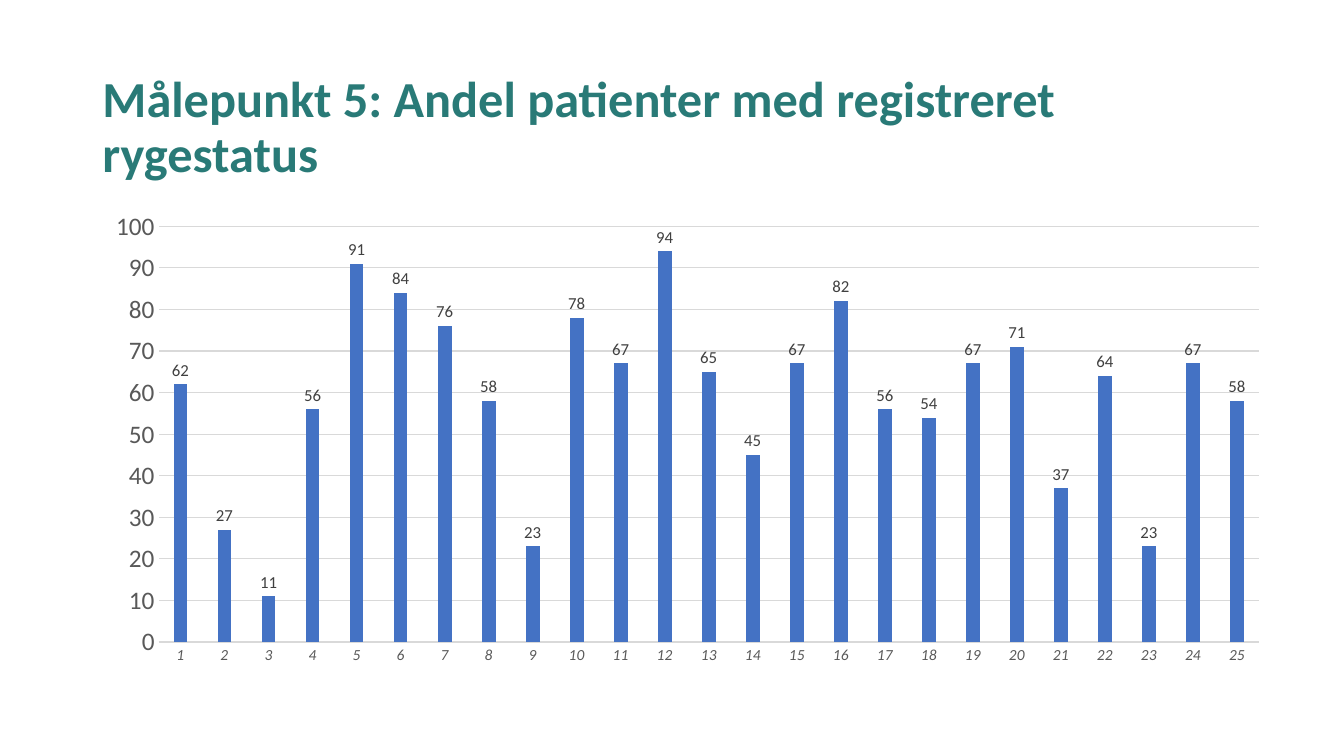
from pptx import Presentation
from pptx.chart.data import CategoryChartData
from pptx.dml.color import RGBColor
from pptx.enum.chart import XL_CHART_TYPE as ChartType
from pptx.enum.chart import XL_LABEL_POSITION as LabelPosition
from pptx.enum.chart import XL_TICK_MARK as TickMark
from pptx.enum.text import MSO_ANCHOR as Anchor
from pptx.util import Pt

TITLE = "Målepunkt 5: Andel patienter med registreret rygestatus"
SHARES = [62, 27, 11, 56, 91, 84, 76, 58, 23, 78, 67, 94, 65,
          45, 67, 82, 56, 54, 67, 71, 37, 64, 23, 67, 58]

FONT = "Calibri"
TEAL = RGBColor(0x29, 0x7A, 0x77)
BLUE = RGBColor(0x44, 0x72, 0xC4)
DARK_GREY = RGBColor(0x40, 0x40, 0x40)
GREY = RGBColor(0x59, 0x59, 0x59)
LIGHT_GREY = RGBColor(0xD9, 0xD9, 0xD9)

LEFT = 66
TITLE_TOP, TITLE_WIDTH, TITLE_HEIGHT = 39.6, 828, 104.4
CHART_TOP, CHART_WIDTH, CHART_HEIGHT = 144, 850.3, 337.7


def format_font(font, size, color, bold=False, italic=False):
    font.name = FONT
    font.size = Pt(size)
    font.color.rgb = color
    font.bold = bold
    font.italic = italic


def write_text(shape, text, line_spacing=1.0, anchor=Anchor.MIDDLE, **font_format):
    frame = shape.text_frame
    frame.word_wrap = True
    frame.vertical_anchor = anchor
    paragraph = frame.paragraphs[0]
    paragraph.line_spacing = line_spacing
    run = paragraph.add_run()
    run.text = text
    format_font(run.font, **font_format)


def format_line(line):
    line.color.rgb = LIGHT_GREY
    line.width = Pt(0.75)


def add_title(slide):
    title = slide.shapes.title
    title.left, title.top = Pt(LEFT), Pt(TITLE_TOP)
    title.width, title.height = Pt(TITLE_WIDTH), Pt(TITLE_HEIGHT)
    write_text(title, TITLE, line_spacing=0.9, size=36, color=TEAL, bold=True)
    title.text_frame.paragraphs[0].alignment = 1


def add_share_chart(slide):
    data = CategoryChartData()
    data.categories = [str(number) for number in range(1, len(SHARES) + 1)]
    data.add_series("Andel", SHARES)
    chart = slide.shapes.add_chart(
        ChartType.COLUMN_CLUSTERED, Pt(LEFT), Pt(CHART_TOP),
        Pt(CHART_WIDTH), Pt(CHART_HEIGHT), data).chart
    chart.has_legend = False
    chart.has_title = False
    chart.font.name = FONT
    chart.font.size = Pt(10)

    plot = chart.plots[0]
    plot.gap_width = 219
    plot.overlap = -27
    plot.vary_by_categories = False
    fill = plot.series[0].format.fill
    fill.solid()
    fill.fore_color.rgb = BLUE

    plot.has_data_labels = True
    labels = plot.data_labels
    labels.show_value = True
    labels.position = LabelPosition.OUTSIDE_END
    format_font(labels.font, size=12, color=DARK_GREY)

    category_axis, value_axis = chart.category_axis, chart.value_axis
    for axis in (category_axis, value_axis):
        axis.major_tick_mark = TickMark.NONE
        axis.minor_tick_mark = TickMark.NONE
    format_font(category_axis.tick_labels.font, size=11, color=GREY, italic=True)
    format_line(category_axis.format.line)

    value_axis.minimum_scale = 0
    value_axis.maximum_scale = 100
    value_axis.major_unit = 10
    value_axis.format.line.fill.background()
    format_font(value_axis.tick_labels.font, size=18, color=GREY)
    value_axis.has_major_gridlines = True
    format_line(value_axis.major_gridlines.format.line)


def main():
    presentation = Presentation()
    presentation.slide_width = Pt(960)
    presentation.slide_height = Pt(540)
    slide = presentation.slides.add_slide(presentation.slide_layouts[5])
    add_title(slide)
    add_share_chart(slide)
    presentation.save("out.pptx")


if __name__ == "__main__":
    main()
